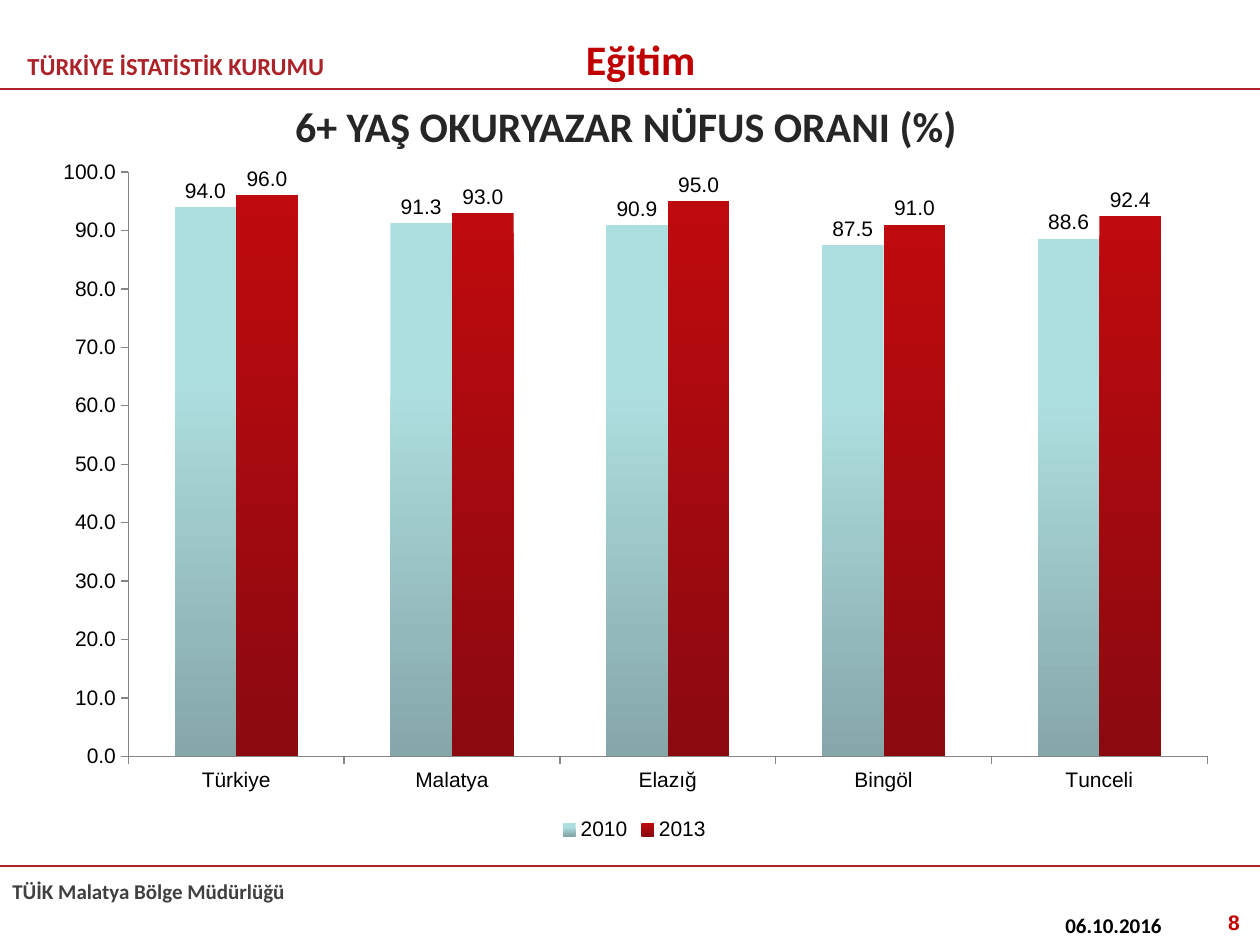
import pptx
import pptx.chart.data
import pptx.dml.color
import pptx.enum.chart
import pptx.enum.shapes
import pptx.enum.text
import pptx.oxml
import pptx.oxml.ns
import pptx.util
from dataclasses import dataclass

SLIDE_WIDTH, SLIDE_HEIGHT = 1260, 945
EMU_PER_PX = 914400 / 126
ALIGN = pptx.enum.text.PP_ALIGN
ANCHOR = pptx.enum.text.MSO_ANCHOR

REGIONS = ["Türkiye", "Malatya", "Elazığ", "Bingöl", "Tunceli"]
LITERACY_RATES = {
    "2010": [94.0, 91.3, 90.9, 87.5, 88.6],
    "2013": [96.0, 93.0, 95.0, 91.0, 92.4],
}


@dataclass(frozen=True)
class Theme:
    heading_font: str = "Calibri"
    chart_font: str = "Arial"
    rule: str = "AB2328"
    accent: str = "C00000"
    title: str = "262626"
    footer: str = "404040"
    black: str = "000000"
    axis: str = "868686"
    # Top colour, bottom colour and where the shading starts
    bars: tuple = (("AEDFE0", "86A7A9", 0.3), ("BF0A0E", "8A0A10", 0))
    title_size: int = 24
    header_size: int = 14
    small_size: int = 12


THEME = Theme()


def px(length):
    return pptx.util.Emu(round(length * EMU_PER_PX))


def rgb(code):
    return pptx.dml.color.RGBColor.from_string(code)


def set_font(font, size, color, name, bold=False):
    font.size = pptx.util.Pt(size)
    font.color.rgb = rgb(color)
    font.name = name
    font.bold = bold


def add_text(slide, text, box, *, size=THEME.small_size, color=THEME.black,
             font=THEME.heading_font, align=ALIGN.LEFT, anchor=ANCHOR.TOP):
    frame = slide.shapes.add_textbox(*map(px, box)).text_frame
    frame.word_wrap = True
    frame.vertical_anchor = anchor
    paragraph = frame.paragraphs[0]
    paragraph.alignment = align
    run = paragraph.add_run()
    run.text = text
    set_font(run.font, size, color, font, bold=True)


def add_rule(slide, y):
    """Draw a line across the whole slide."""
    rule = slide.shapes.add_connector(
        pptx.enum.shapes.MSO_CONNECTOR.STRAIGHT, 0, px(y), px(SLIDE_WIDTH), px(y))
    rule.line.color.rgb = rgb(THEME.rule)
    rule.line.width = pptx.util.Pt(1.5)
    properties = rule._element.spPr
    properties.append(properties.makeelement(pptx.oxml.ns.qn("a:effectLst"), {}))


def style_axis(axis):
    axis.has_major_gridlines = False
    axis.major_tick_mark = pptx.enum.chart.XL_TICK_MARK.OUTSIDE
    axis.format.line.color.rgb = rgb(THEME.axis)
    axis.format.line.width = pptx.util.Pt(0.75)
    set_font(axis.tick_labels.font, THEME.small_size, THEME.black, THEME.chart_font)


def style_series(series, top, bottom, shading_start):
    fill = series.format.fill
    fill.gradient()
    fill.gradient_angle = 270
    first, last = fill.gradient_stops
    first.color.rgb, first.position = rgb(top), shading_start
    last.color.rgb, last.position = rgb(bottom), 1
    labels = series.data_labels
    labels.show_value = True
    labels.number_format = "0.0"
    labels.number_format_is_linked = False
    labels.position = pptx.enum.chart.XL_LABEL_POSITION.OUTSIDE_END
    set_font(labels.font, THEME.small_size, THEME.black, THEME.chart_font)


def place_plot(chart, **fractions):
    """Fix the inner plot area, given as fractions of the chart."""
    plot_area = chart._chartSpace.chart.plotArea
    for layout in plot_area.findall(pptx.oxml.ns.qn("c:layout")):
        plot_area.remove(layout)
    sizes = "".join(f'<c:{key} val="{value}"/>' for key, value in fractions.items())
    plot_area.insert(0, pptx.oxml.parse_xml(
        f'<c:layout {pptx.oxml.ns.nsdecls("c")}><c:manualLayout>'
        '<c:layoutTarget val="inner"/><c:xMode val="edge"/><c:yMode val="edge"/>'
        f'{sizes}</c:manualLayout></c:layout>'))


def add_literacy_chart(slide, box):
    data = pptx.chart.data.CategoryChartData(number_format="0.0")
    data.categories = REGIONS
    for year, rates in LITERACY_RATES.items():
        data.add_series(year, rates)
    chart = slide.shapes.add_chart(
        pptx.enum.chart.XL_CHART_TYPE.COLUMN_CLUSTERED, *map(px, box), data).chart
    set_font(chart.font, 10, THEME.black, THEME.chart_font)
    chart.has_title = False
    chart.has_legend = True
    chart.legend.position = pptx.enum.chart.XL_LEGEND_POSITION.BOTTOM
    chart.legend.include_in_layout = False
    set_font(chart.legend.font, THEME.small_size, THEME.black, THEME.chart_font)

    style_axis(chart.category_axis)
    rate_axis = chart.value_axis
    style_axis(rate_axis)
    rate_axis.minimum_scale, rate_axis.maximum_scale = 0, 100
    rate_axis.major_unit = 10
    rate_axis.tick_labels.number_format = "0.0"
    rate_axis.tick_labels.number_format_is_linked = False

    plot = chart.plots[0]
    plot.gap_width, plot.overlap = 150, 0
    plot.vary_by_categories = False
    for series, shading in zip(plot.series, THEME.bars):
        style_series(series, *shading)
    place_plot(chart, x=0.075, y=0.036, w=0.906, h=0.836)


def main():
    deck = pptx.Presentation()
    deck.slide_width, deck.slide_height = px(SLIDE_WIDTH), px(SLIDE_HEIGHT)
    slide = deck.slides.add_slide(deck.slide_layouts[6])

    add_text(slide, "TÜRKİYE İSTATİSTİK KURUMU", (15, 41, 446, 49),
             size=THEME.header_size, color=THEME.rule, anchor=ANCHOR.MIDDLE)
    add_text(slide, "TÜİK Malatya Bölge Müdürlüğü", (0, 872, 541, 38),
             color=THEME.footer)
    for y in (89, 866):
        add_rule(slide, y)
    add_text(slide, "6+ YAŞ OKURYAZAR NÜFUS ORANI (%)", (59, 76, 1134, 100),
             size=THEME.title_size, color=THEME.title,
             align=ALIGN.CENTER, anchor=ANCHOR.MIDDLE)
    add_text(slide, "06.10.2016", (1053, 906, 150, 39))
    add_text(slide, "8", (958, 903, 294, 42), color=THEME.accent,
             font=THEME.chart_font, align=ALIGN.RIGHT)
    add_text(slide, "Eğitim", (520, 27, 241, 63), size=THEME.title_size,
             color=THEME.accent, align=ALIGN.CENTER, anchor=ANCHOR.MIDDLE)
    add_literacy_chart(slide, (39, 147, 1191, 699))
    deck.save("out.pptx")


if __name__ == "__main__":
    main()
